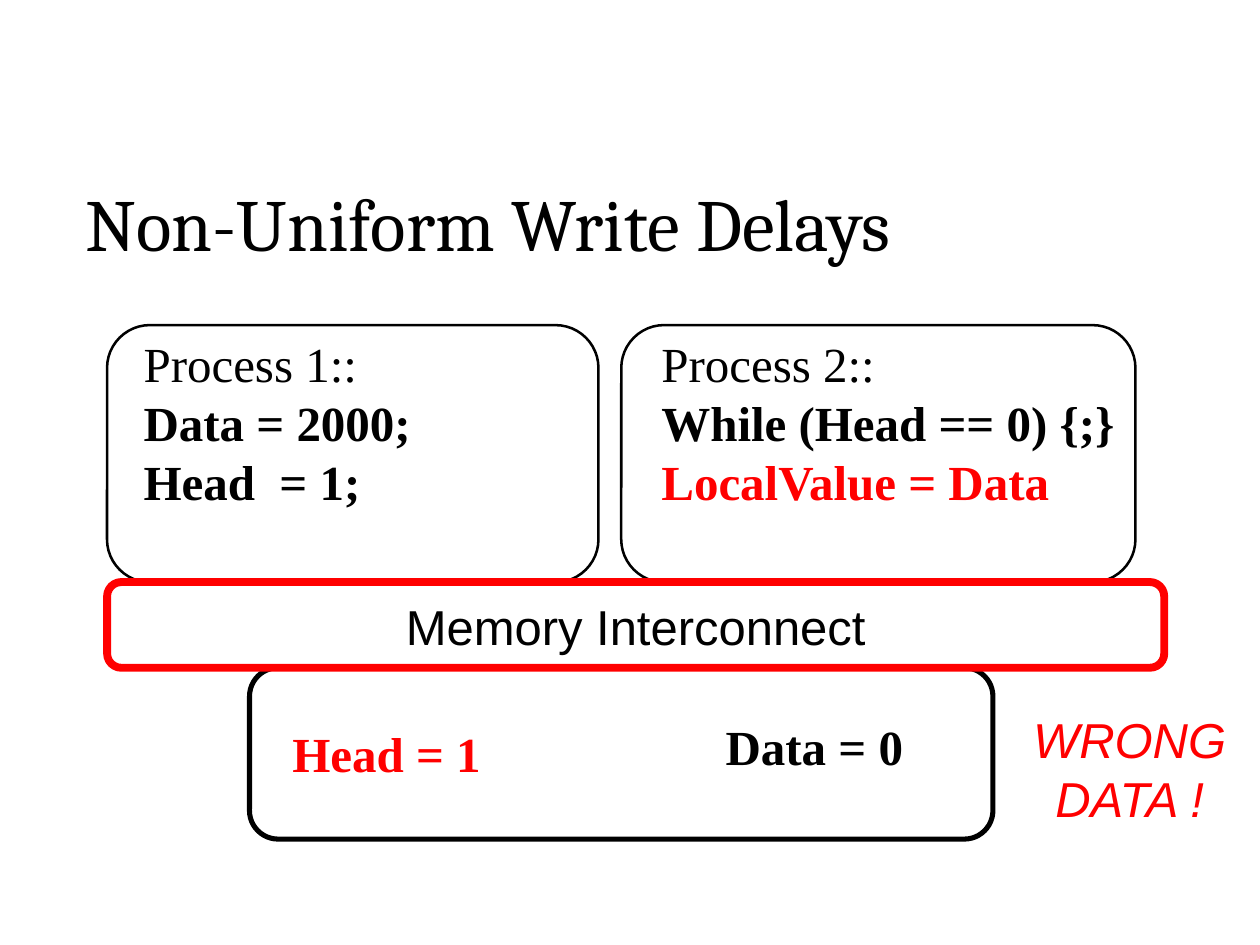
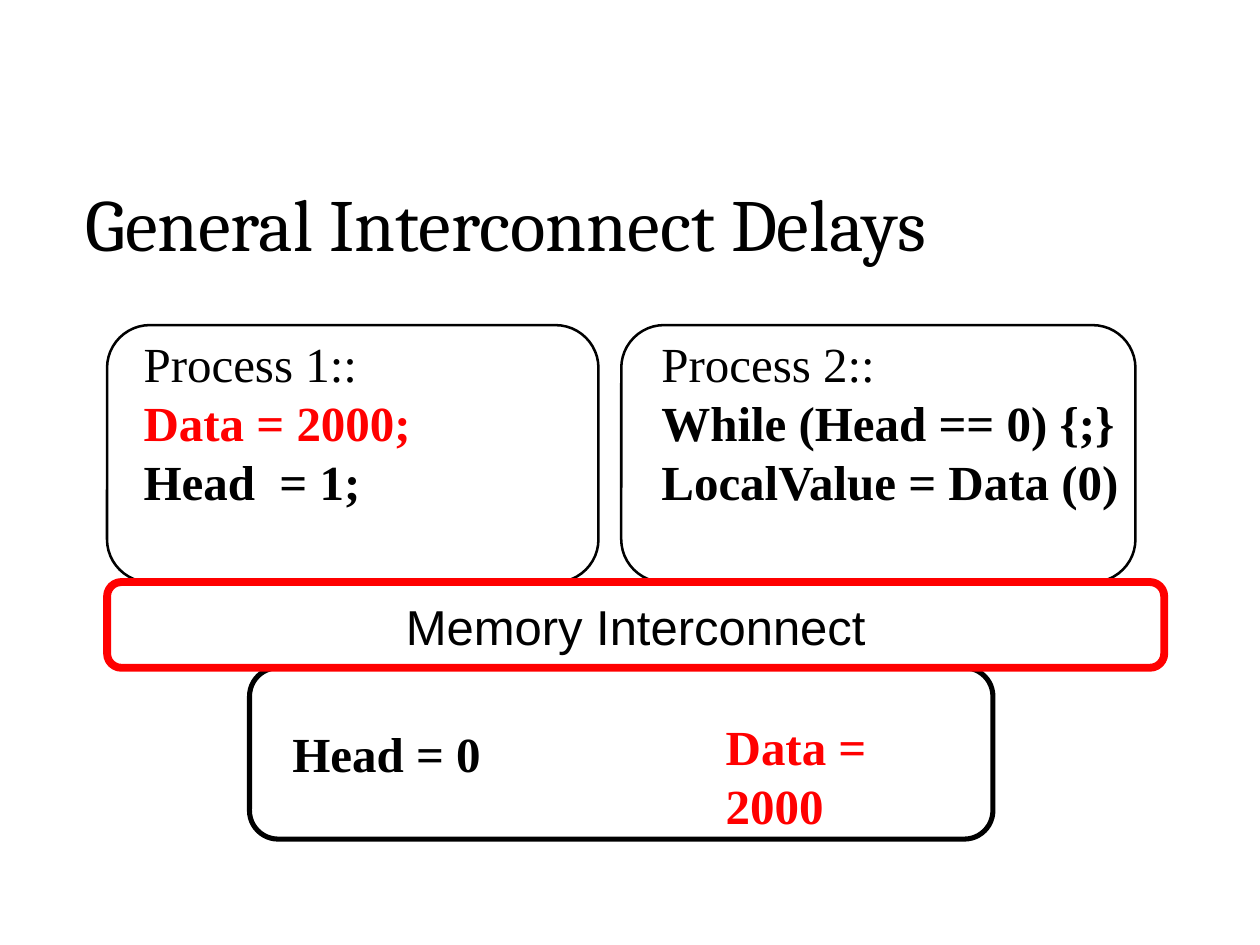
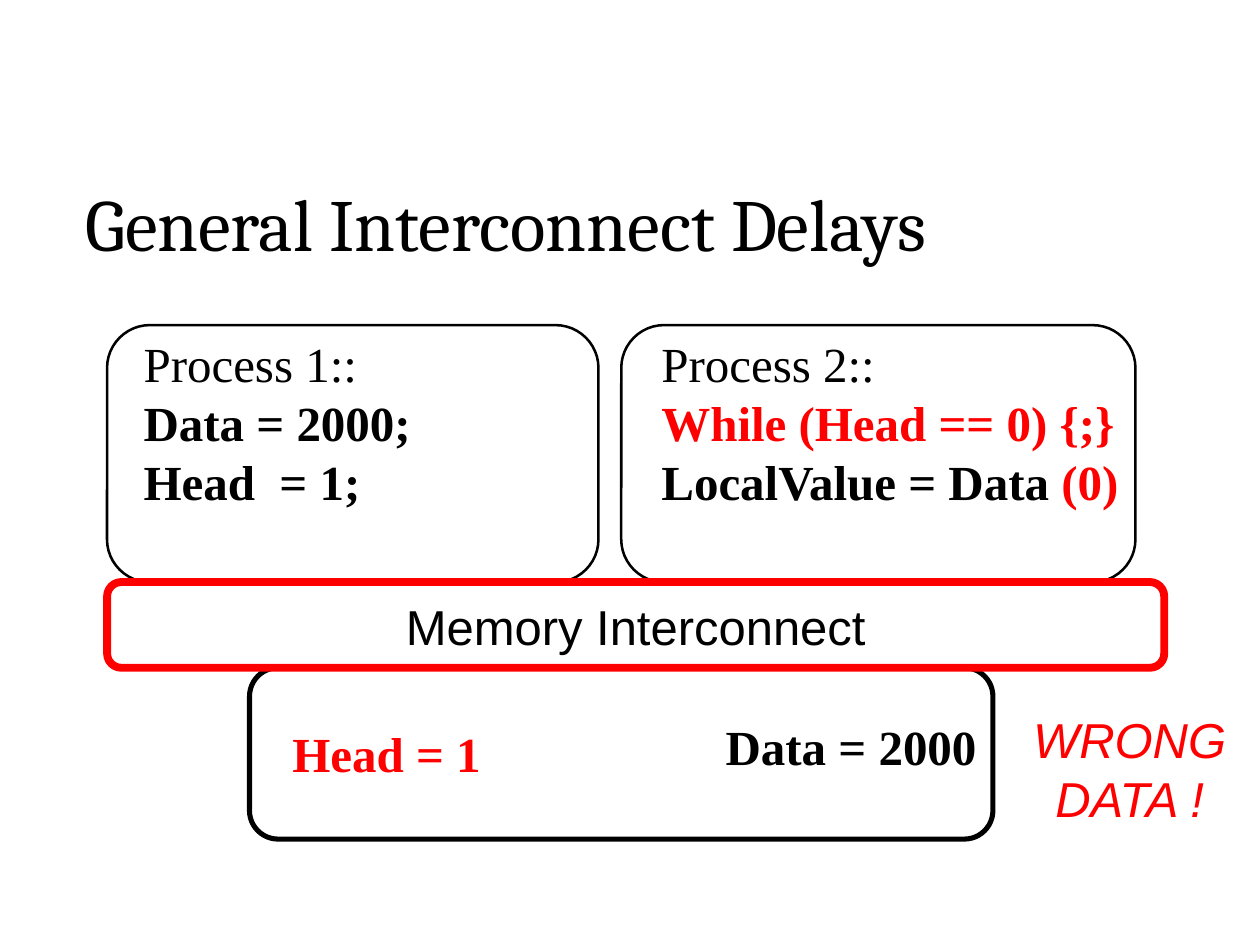
from dataclasses import dataclass

from pptx import Presentation
from pptx.dml.color import RGBColor
from pptx.enum.shapes import MSO_SHAPE
from pptx.enum.text import MSO_ANCHOR, MSO_AUTO_SIZE, PP_ALIGN
from pptx.util import Pt


@dataclass(frozen=True)
class Theme:
    black: RGBColor = RGBColor(0x00, 0x00, 0x00)
    red: RGBColor = RGBColor(0xFF, 0x00, 0x00)
    title_font: str = "Cambria"
    code_font: str = "Times New Roman"
    label_font: str = "Arial"
    title_size: int = 42
    body_size: int = 28
    thin_line: float = 1.45
    memory_line: float = 2.89
    interconnect_line: float = 4.5


theme = Theme()
CODE_INSETS = (6.5, 5, 6.5, 2.9)
LABEL_INSETS = (9.4, 7.2, 9.4, 5.8)
PLAIN_INSETS = (7.2, 3.6, 7.2, 3.6)


def write_text(shape, lines, *, font=theme.code_font, size=theme.body_size,
               color=theme.black, highlights=(), bold_from=None, italic=False,
               align=PP_ALIGN.LEFT, anchor=MSO_ANCHOR.TOP,
               insets=CODE_INSETS, wrap=False, grow=False):
    """Write lines of runs; runs in highlights are red, lines from bold_from on are bold."""
    frame = shape.text_frame
    frame.word_wrap = wrap
    frame.auto_size = MSO_AUTO_SIZE.SHAPE_TO_FIT_TEXT if grow else MSO_AUTO_SIZE.NONE
    frame.vertical_anchor = anchor
    (frame.margin_left, frame.margin_top,
     frame.margin_right, frame.margin_bottom) = map(Pt, insets)
    for index, line in enumerate(lines):
        paragraph = frame.add_paragraph() if index else frame.paragraphs[0]
        paragraph.alignment = align
        for text in line:
            run = paragraph.add_run()
            run.text = text
            run.font.name = font
            run.font.size = Pt(size)
            run.font.bold = bold_from is not None and index >= bold_from
            run.font.italic = italic
            run.font.color.rgb = theme.red if text in highlights else color


def add_outline(slide, box, color, width):
    shape = slide.shapes.add_shape(MSO_SHAPE.ROUNDED_RECTANGLE, *map(Pt, box))
    shape.shadow.inherit = False
    shape.fill.background()
    shape.line.color.rgb = color
    shape.line.width = Pt(width)
    return shape


# Boxes are left, top, width, height
PROCESS_TEXT_BOXES = [(75.6, 185.8, 168.5, 104.4), (371.5, 185.8, 285.8, 104.4)]
OUTLINES = [
    ((142.6, 381.6, 424.8, 97.9), theme.memory_line),
    ((61.2, 185.8, 280.8, 146.9), theme.thin_line),
    ((355, 185.8, 293.8, 146.9), theme.thin_line),
]
INTERCONNECT_BOX = (61.2, 332.6, 604.1, 49)
WARNING_BOX = (578.9, 401.8, 133.2, 74.9)

process_1 = [("Process 1::",), ("Data = 2000;",), ("Head  = 1;",)]
process_2_start = [("Process 2::",), ("While (Head == 0) {;}",)]

slides = [
    dict(title="Non-Uniform Write Delays", title_width=523.4,
         assignment=("LocalValue = Data",), head="Head = 1", data="Data = 0",
         data_width=167.8, highlights=("LocalValue = Data", "Head = 1"), wrong=True),
    dict(title="General Interconnect Delays", title_width=548.6,
         assignment=("LocalValue = Data (0)",), head="Head = 0", data="Data = 2000",
         data_width=156, highlights=("Data = 2000;", "Data = 2000"), wrong=False),
    dict(title="General Interconnect Delays", title_width=548.6,
         assignment=("LocalValue = Data ", "(0)"), head="Head = 1", data="Data = 2000",
         data_width=167.8, highlights=("While (Head == 0) {;}", "(0)", "Head = 1"),
         wrong=True),
]

presentation = Presentation()
presentation.slide_width = Pt(720)
presentation.slide_height = Pt(540)

for content in slides:
    slide = presentation.slides.add_slide(presentation.slide_layouts[6])
    highlights = content["highlights"]

    processes = [process_1, process_2_start + [content["assignment"]]]
    for box, lines in zip(PROCESS_TEXT_BOXES, processes):
        process = slide.shapes.add_textbox(*map(Pt, box))
        write_text(process, lines, highlights=highlights, bold_from=1)

    memory_values = [
        (content["head"], (160.6, 408.2, 144.7, 38.9)),
        (content["data"], (408.2, 404.6, content["data_width"], 38.9)),
    ]
    for text, box in memory_values:
        value = slide.shapes.add_textbox(*map(Pt, box))
        write_text(value, [(text,)], highlights=highlights, bold_from=0, wrap=True)

    for box, width in OUTLINES:
        add_outline(slide, box, theme.black, width)
    interconnect = add_outline(slide, INTERCONNECT_BOX, theme.red, theme.interconnect_line)
    write_text(interconnect, [("Memory Interconnect",)], font=theme.label_font,
               align=PP_ALIGN.CENTER, anchor=MSO_ANCHOR.MIDDLE, insets=LABEL_INSETS)

    title = slide.shapes.add_textbox(Pt(41.8), Pt(97.9), Pt(content["title_width"]), Pt(58.3))
    write_text(title, [(content["title"],)], font=theme.title_font,
               size=theme.title_size, insets=PLAIN_INSETS, grow=True)

    if content["wrong"]:
        warning = slide.shapes.add_textbox(*map(Pt, WARNING_BOX))
        write_text(warning, [("WRONG",), ("DATA !",)], font=theme.label_font,
                   color=theme.red, italic=True, align=PP_ALIGN.CENTER,
                   insets=PLAIN_INSETS, grow=True)

presentation.save("out.pptx")
